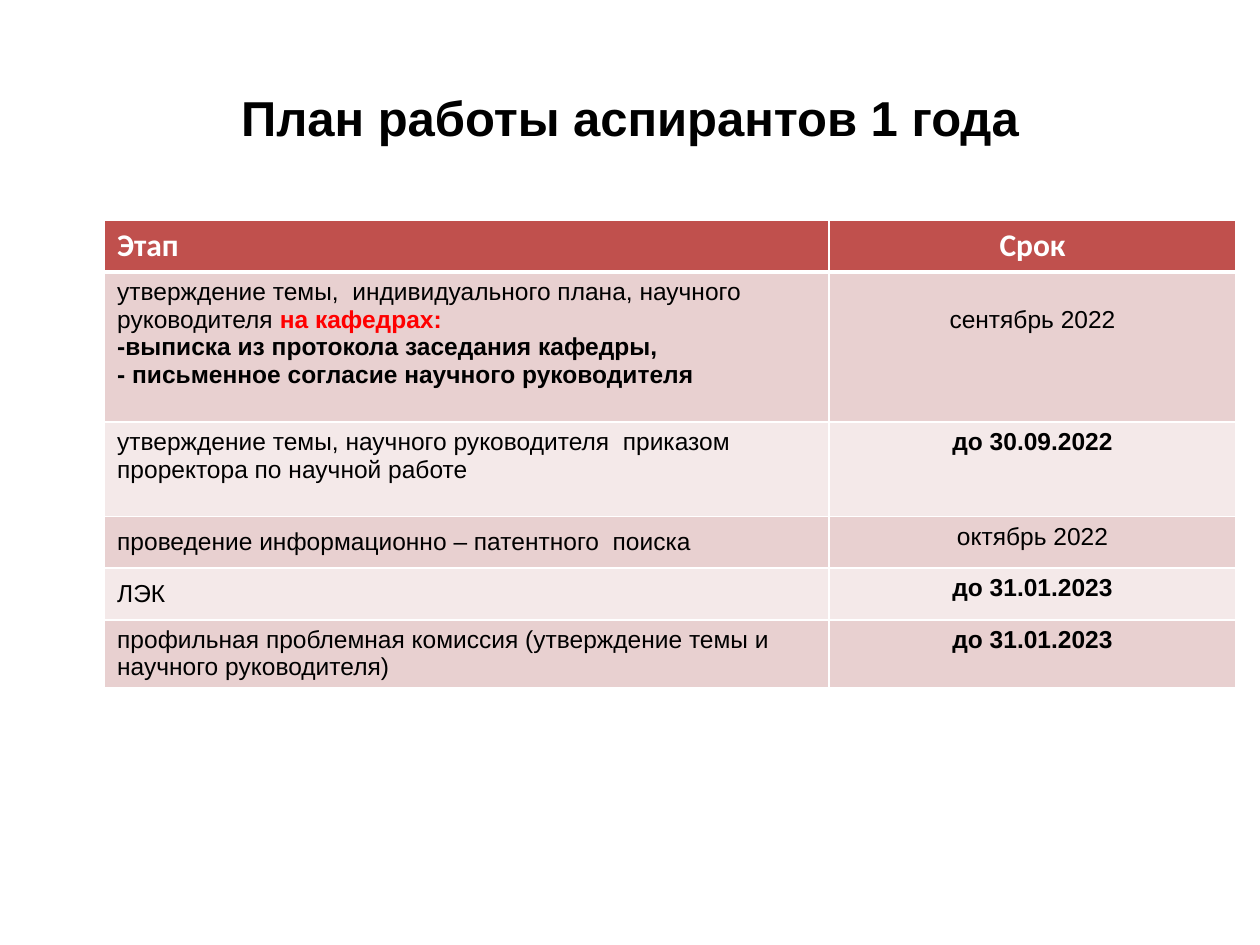
from lxml import etree
from pptx import Presentation
from pptx.dml.color import RGBColor
from pptx.enum.text import MSO_ANCHOR, PP_ALIGN
from pptx.oxml.ns import qn
from pptx.util import Inches, Pt

LEFT, CENTER = PP_ALIGN.LEFT, PP_ALIGN.CENTER
TOP, MIDDLE = MSO_ANCHOR.TOP, MSO_ANCHOR.MIDDLE

BLACK = RGBColor(0x00, 0x00, 0x00)
WHITE = RGBColor(0xFF, 0xFF, 0xFF)
RED = RGBColor(0xFF, 0x00, 0x00)
HEADER_FILL = RGBColor(0xC0, 0x50, 0x4D)
BAND_FILLS = [RGBColor(0xF4, 0xE9, 0xE9), RGBColor(0xE8, 0xD0, 0xD0)]

COLUMN_WIDTHS = [5.75, 3.23]
ROW_HEIGHTS = [0.41, 1.19, 0.75, 0.41, 0.41, 0.53]
LINE_HEIGHT = 0.22

# Each cell is a list of paragraphs; each paragraph is a list of (text, bold, colour).
STAGES = [
    [[("Этап", True, WHITE)]],
    [
        [("утверждение темы,  индивидуального плана, научного руководителя ", False, BLACK),
         ("на кафедрах:", True, RED)],
        [("-выписка из протокола заседания кафедры,", True, BLACK)],
        [("- письменное согласие научного руководителя", True, BLACK)],
    ],
    [[("утверждение темы, научного руководителя  приказом проректора по научной работе", False, BLACK)]],
    [[("проведение информационно – патентного  поиска", False, BLACK)]],
    [[("ЛЭК", False, BLACK)]],
    [[("профильная проблемная комиссия (утверждение темы и научного руководителя)", False, BLACK)]],
]
DEADLINES = [
    [[("Срок", True, WHITE)]],
    [[("сентябрь 2022", False, BLACK)]],
    [[("до 30.09.2022", True, BLACK)]],
    [[("октябрь 2022", False, BLACK)]],
    [[("до 31.01.2023", True, BLACK)]],
    [[("до 31.01.2023", True, BLACK)]],
]
STAGE_ANCHORS = [TOP, TOP, TOP, MIDDLE, MIDDLE, MIDDLE]


def set_borders(cell, bottom_width):
    """Draw white borders; they must precede the fill in the cell properties."""
    properties = cell._tc.get_or_add_tcPr()
    widths = {"a:lnL": 1, "a:lnR": 1, "a:lnT": 1, "a:lnB": bottom_width}
    for tag, width in widths.items():
        line = etree.SubElement(properties, qn(tag), w=str(Pt(width)))
        fill = etree.SubElement(line, qn("a:solidFill"))
        etree.SubElement(fill, qn("a:srgbClr"), val=str(WHITE))


def write_paragraphs(cell, paragraphs, align, font_name, size):
    frame = cell.text_frame
    for index, spans in enumerate(paragraphs):
        para = frame.add_paragraph() if index else frame.paragraphs[0]
        para.alignment = align
        para.font.name = font_name
        para.font.size = Pt(size)
        for text, bold, color in spans:
            span = para.add_run()
            span.text = text
            span.font.bold = bold
            span.font.color.rgb = color


deck = Presentation()
deck.slide_width, deck.slide_height = Inches(10), Inches(7.5)
page = deck.slides.add_slide(deck.slide_layouts[5])

title = page.shapes.title
title.left, title.top = Inches(0.5), Inches(0.3)
title.width, title.height = Inches(9), Inches(1.25)
title.text_frame.text = "План работы аспирантов 1 года"
title.text_frame.vertical_anchor = MIDDLE
heading = title.text_frame.paragraphs[0]
heading.alignment = CENTER
heading.font.name = "Arial"
heading.font.size = Pt(28)
heading.font.bold = True
heading.font.color.rgb = BLACK

plan = page.shapes.add_table(
    len(ROW_HEIGHTS), len(COLUMN_WIDTHS), Inches(0.83), Inches(1.75),
    Inches(sum(COLUMN_WIDTHS)), Inches(sum(ROW_HEIGHTS))).table
for column, width in zip(plan.columns, COLUMN_WIDTHS):
    column.width = Inches(width)

for row, height in enumerate(ROW_HEIGHTS):
    plan.rows[row].height = Inches(height)
    is_header = row == 0
    font_name, size = ("Calibri", 18) if is_header else ("Arial", 14)
    cells = [(STAGES[row], LEFT, STAGE_ANCHORS[row]), (DEADLINES[row], CENTER, TOP)]
    for column, (paragraphs, align, anchor) in enumerate(cells):
        cell = plan.cell(row, column)
        write_paragraphs(cell, paragraphs, align, font_name, size)
        cell.vertical_anchor = anchor
        set_borders(cell, 3 if is_header else 1)
        cell.fill.solid()
        cell.fill.fore_color.rgb = HEADER_FILL if is_header else BAND_FILLS[row % 2]

# The first deadline sits level with the second line of its stage.
plan.cell(1, 1).margin_top = Inches(0.05 + LINE_HEIGHT)

deck.save("out.pptx")
